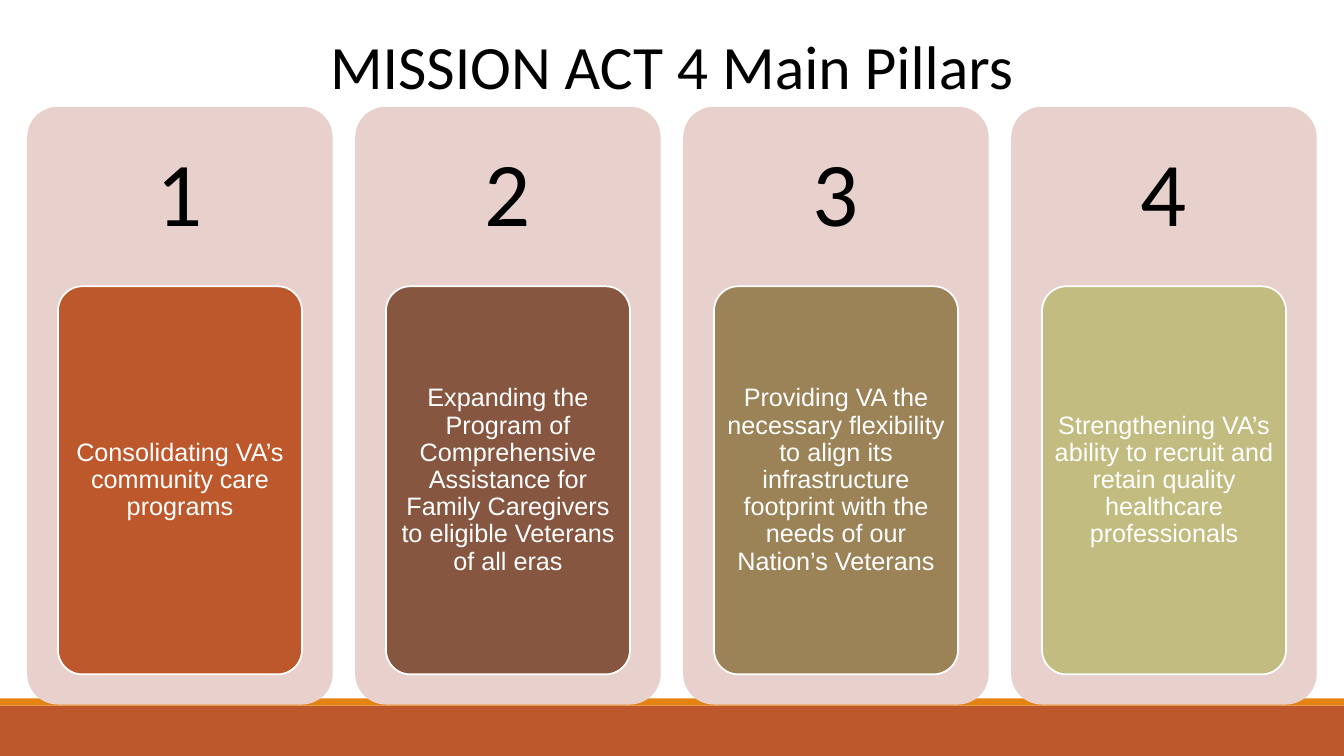
from pptx import Presentation
from pptx.dml.color import RGBColor
from pptx.enum.shapes import MSO_SHAPE
from pptx.enum.text import MSO_ANCHOR, MSO_AUTO_SIZE, PP_ALIGN
from pptx.util import Inches, Pt

RECTANGLE = MSO_SHAPE.RECTANGLE
ROUNDED = MSO_SHAPE.ROUNDED_RECTANGLE
MIDDLE = MSO_ANCHOR.MIDDLE
CENTER = PP_ALIGN.CENTER
NO_AUTOFIT = MSO_AUTO_SIZE.NONE
TITLE_ONLY = 5

COLORS = {
    "black": "000000",
    "white": "FFFFFF",
    "panel": "E8D1CD",
    "rust": "BD582C",
    "orange": "E48312",
    "brown": "865640",
    "tan": "9B8357",
    "olive": "C2BC80",
}

PILLARS = [
    ("Consolidating VA’s community care programs", "rust"),
    ("Expanding the Program of Comprehensive Assistance for Family Caregivers "
     "to eligible Veterans of all eras", "brown"),
    ("Providing VA the necessary flexibility to align its infrastructure "
     "footprint with the needs of our Nation’s Veterans", "tan"),
    ("Strengthening VA’s ability to recruit and retain quality healthcare "
     "professionals", "olive"),
]

SLIDE_WIDTH, SLIDE_HEIGHT = 13.33, 7.5
PANEL_LEFT, PANEL_TOP, PANEL_WIDTH, PANEL_HEIGHT = 0.27, 1.06, 3.03, 5.93
PANEL_PITCH = (SLIDE_WIDTH - 2 * PANEL_LEFT - PANEL_WIDTH) / (len(PILLARS) - 1)
NUMBER_HEIGHT = 1.78
CARD_WIDTH, CARD_HEIGHT = 2.42, 3.85


def color(name):
    return RGBColor.from_string(COLORS[name])


def write_text(shape, text, *, size, font, ink, insets=(0.1, 0.05), wrap=True,
               spacing=1.0):
    frame = shape.text_frame
    frame.auto_size = NO_AUTOFIT
    frame.word_wrap = wrap
    frame.vertical_anchor = MIDDLE
    frame.margin_left = frame.margin_right = Inches(insets[0])
    frame.margin_top = frame.margin_bottom = Inches(insets[1])
    para = frame.paragraphs[0]
    para.alignment = CENTER
    para.line_spacing = spacing
    span = para.add_run()
    span.text = text
    span.font.size = Pt(size)
    span.font.name = font
    span.font.color.rgb = color(ink)


def add_block(page, kind, left, top, width, height, fill, outline=None):
    block = page.shapes.add_shape(
        kind, Inches(left), Inches(top), Inches(width), Inches(height))
    block.shadow.inherit = False
    block.fill.solid()
    block.fill.fore_color.rgb = color(fill)
    if kind == ROUNDED:
        block.adjustments[0] = 0.1
    if outline:
        block.line.color.rgb = color(outline)
        block.line.width = Pt(1.25)
    else:
        block.line.fill.background()
    return block


def add_title(page, text):
    title = page.shapes.title
    title.left, title.top = Inches(3.14), Inches(0.22)
    title.width, title.height = Inches(7.05), Inches(0.84)
    write_text(title, text, size=44, font="Calibri", ink="black", wrap=False)


def add_pillar(page, index, text, fill):
    left = PANEL_LEFT + index * PANEL_PITCH
    add_block(page, ROUNDED, left, PANEL_TOP, PANEL_WIDTH, PANEL_HEIGHT, "panel")
    number = page.shapes.add_textbox(
        Inches(left), Inches(PANEL_TOP), Inches(PANEL_WIDTH), Inches(NUMBER_HEIGHT))
    write_text(number, str(index + 1), size=65, font="Calibri", ink="black",
               insets=(0.27, 0.27), spacing=0.9)
    card = add_block(page, ROUNDED, left + (PANEL_WIDTH - CARD_WIDTH) / 2,
                     PANEL_TOP + NUMBER_HEIGHT, CARD_WIDTH, CARD_HEIGHT,
                     fill, outline="white")
    write_text(card, text, size=18, font="Arial", ink="white",
               insets=(0.05, 0.04), spacing=0.9)


def main():
    deck = Presentation()
    deck.slide_width = Inches(SLIDE_WIDTH)
    deck.slide_height = Inches(SLIDE_HEIGHT)
    page = deck.slides.add_slide(deck.slide_layouts[TITLE_ONLY])
    add_block(page, RECTANGLE, 0, 7, SLIDE_WIDTH, 0.5, "rust")
    add_block(page, RECTANGLE, 0, 6.93, SLIDE_WIDTH, 0.07, "orange")
    add_title(page, "MISSION ACT 4 Main Pillars")
    for index, (text, fill) in enumerate(PILLARS):
        add_pillar(page, index, text, fill)
    deck.save("out.pptx")


if __name__ == "__main__":
    main()
